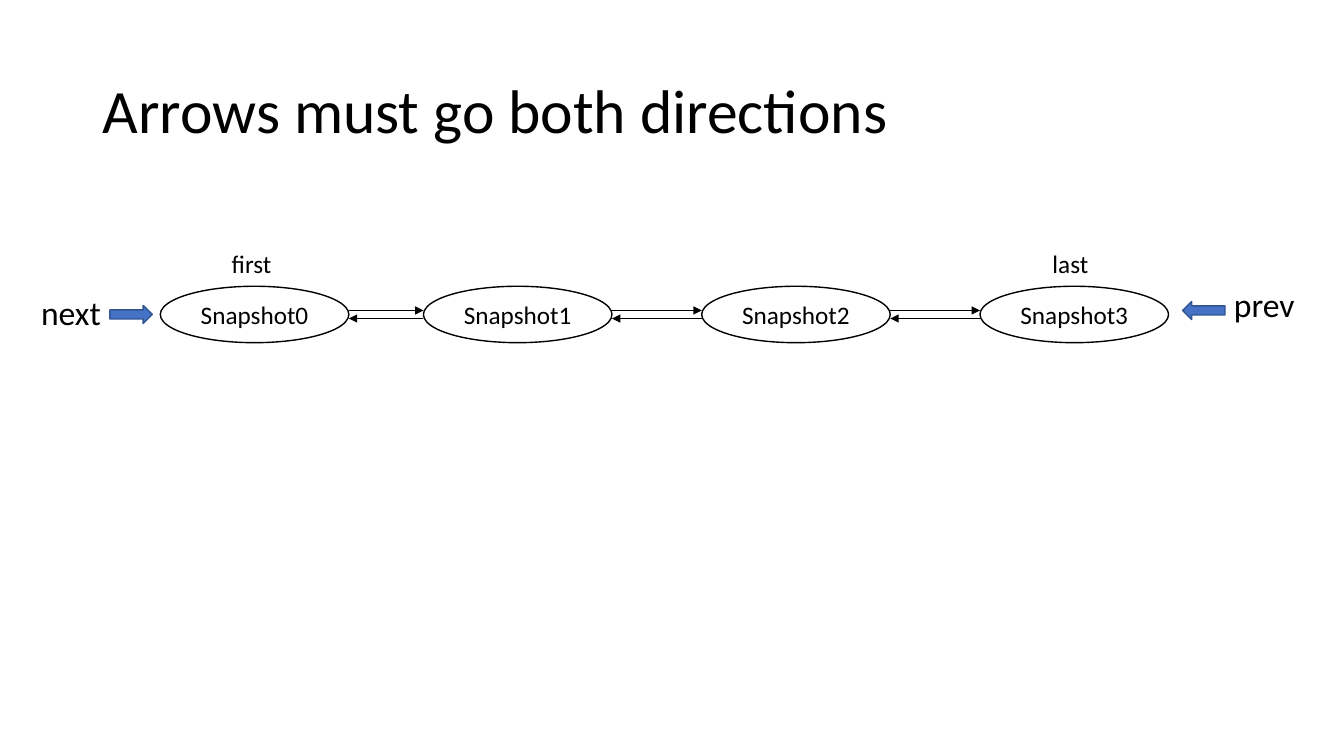
"""Build a slide showing a doubly linked chain of snapshots."""
from dataclasses import dataclass

from lxml import etree
from pptx import Presentation
from pptx import util as u
from pptx.dml.color import RGBColor
from pptx.enum import shapes, text
from pptx.oxml.ns import qn


@dataclass(frozen=True)
class Theme:
    """Fonts, colours and sizes of the slide."""
    font: str = "Calibri"
    ink: str = "000000"
    paper: str = "FFFFFF"
    accent: str = "4472C4"
    accent_edge: str = "325491"
    title: float = 44
    pointer: float = 24
    body: float = 18
    outline: float = 1
    link: float = 0.5


class SlideBuilder:
    """Draw styled elements on the current slide."""

    def __init__(self, slide, theme):
        self.shapes = slide.shapes
        self.theme = theme

    def set_words(self, frame, words, size):
        """Put styled words into a text frame."""
        frame.text = words
        font = frame.paragraphs[0].runs[0].font
        font.name = self.theme.font
        font.size = u.Pt(size)
        font.color.rgb = RGBColor.from_string(self.theme.ink)

    def label(self, words, box, size):
        """Add an unwrapped text label."""
        frame = self.shapes.add_textbox(*map(u.Inches, box)).text_frame
        frame.word_wrap = False
        frame.auto_size = text.MSO_AUTO_SIZE.SHAPE_TO_FIT_TEXT
        self.set_words(frame, words, size)

    def title(self, words, box):
        """Add the slide title."""
        frame = self.shapes.add_textbox(*map(u.Inches, box)).text_frame
        frame.word_wrap = True
        frame.vertical_anchor = text.MSO_ANCHOR.MIDDLE
        self.set_words(frame, words, self.theme.title)
        frame.paragraphs[0].line_spacing = 0.9

    def shape(self, kind, box, fill, edge):
        """Add a filled and outlined preset shape."""
        outline = self.shapes.add_shape(kind, *map(u.Inches, box))
        outline.shadow.inherit = False
        outline.fill.solid()
        outline.fill.fore_color.rgb = RGBColor.from_string(fill)
        outline.line.color.rgb = RGBColor.from_string(edge)
        outline.line.width = u.Pt(self.theme.outline)
        return outline

    def snapshot(self, words, box):
        """Add a named snapshot oval."""
        oval = self.shape(shapes.MSO_SHAPE.OVAL, box, self.theme.paper, self.theme.ink)
        frame = oval.text_frame
        frame.word_wrap = False
        frame.vertical_anchor = text.MSO_ANCHOR.MIDDLE
        self.set_words(frame, words, self.theme.body)
        frame.paragraphs[0].alignment = text.PP_ALIGN.CENTER

    def block_arrow(self, kind, box):
        """Add a coloured block arrow."""
        self.shape(kind, box, self.theme.accent, self.theme.accent_edge)

    def link(self, start, end, y):
        """Add a thin horizontal arrow from start to end."""
        points = map(u.Inches, (start, y, end, y))
        arrow = self.shapes.add_connector(shapes.MSO_CONNECTOR.STRAIGHT, *points)
        arrow.line.color.rgb = RGBColor.from_string(self.theme.ink)
        arrow.line.width = u.Pt(self.theme.link)
        properties = arrow._element.spPr
        etree.SubElement(properties.find(qn("a:ln")), qn("a:tailEnd"), type="triangle")
        etree.SubElement(properties, qn("a:effectLst"))


def main():
    """Compose and save the slide."""
    deck = Presentation()
    deck.slide_width, deck.slide_height = u.Inches(13.33), u.Inches(7.5)
    theme = Theme()
    page = SlideBuilder(deck.slides.add_slide(deck.slide_layouts[6]), theme)

    page.title("Arrows must go both directions", (0.92, 0.4, 11.5, 1.45))

    oval_width, oval_height, oval_top = 1.87, 0.56, 2.84
    oval_lefts = (1.59, 4.2, 6.96, 9.72)
    for number, left in enumerate(oval_lefts):
        page.snapshot(f"Snapshot{number}", (left, oval_top, oval_width, oval_height))

    for left, following in zip(oval_lefts, oval_lefts[1:]):
        right = left + oval_width
        page.link(right, following, 3.08)
        page.link(following, right, 3.16)

    page.label("first", (2.2, 2.41, 0.6, 0.4), theme.body)
    page.label("last", (10.34, 2.41, 0.56, 0.4), theme.body)
    page.label("next", (0.31, 2.85, 0.8, 0.5), theme.pointer)
    page.label("prev", (12.14, 2.77, 0.81, 0.5), theme.pointer)
    page.block_arrow(shapes.MSO_SHAPE.RIGHT_ARROW, (1.09, 3.03, 0.42, 0.18))
    page.block_arrow(shapes.MSO_SHAPE.LEFT_ARROW, (11.73, 2.99, 0.42, 0.18))

    deck.save("out.pptx")


if __name__ == "__main__":
    main()
